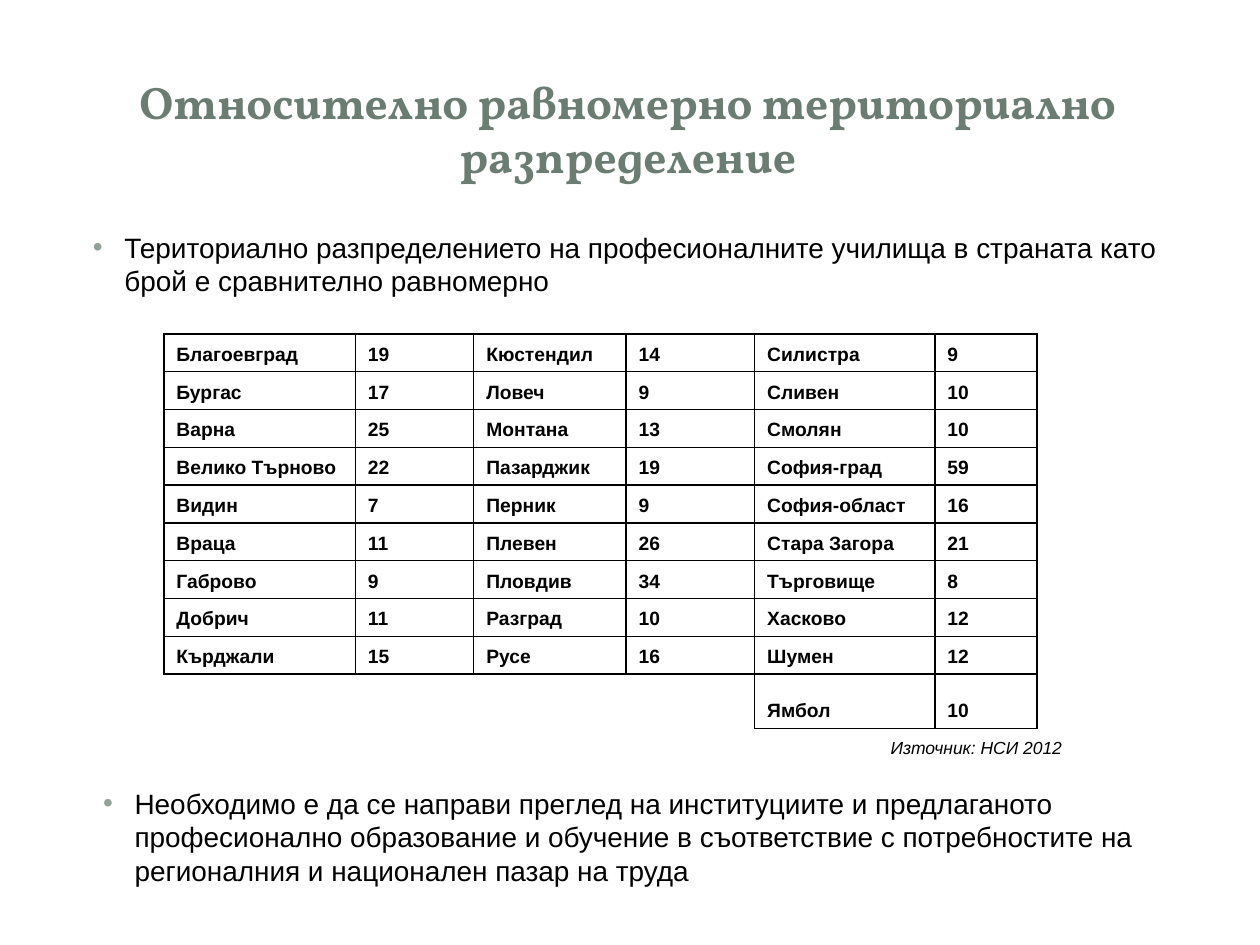
"""Builds a slide on the territorial distribution of vocational schools."""
from itertools import zip_longest

from lxml import etree
from pptx import Presentation
from pptx.dml.color import RGBColor
from pptx.enum.lang import MSO_LANGUAGE_ID
from pptx.enum.shapes import MSO_SHAPE
from pptx.enum.text import MSO_ANCHOR, PP_ALIGN
from pptx.oxml.ns import qn
from pptx.util import Inches, Pt

CENTER, LEFT = PP_ALIGN.CENTER, PP_ALIGN.LEFT
TOP, MIDDLE, BOTTOM = MSO_ANCHOR.TOP, MSO_ANCHOR.MIDDLE, MSO_ANCHOR.BOTTOM
ROUNDED, RECTANGLE = MSO_SHAPE.ROUNDED_RECTANGLE, MSO_SHAPE.RECTANGLE
BULGARIAN = MSO_LANGUAGE_ID.BULGARIAN

COLORS = {"title": "6B7D72", "bullet": "93A299", "ink": "000000", "panel": "FFFFFF"}
TITLE = "Относително равномерно териториално разпределение"
FINDING = ("Териториално разпределението на професионалните училища "
           "в страната като брой е сравнително равномерно")
CONCLUSION = ("Необходимо е да се направи преглед на институциите и предлаганото "
              "професионално образование и обучение в съответствие с потребностите "
              "на регионалния и национален пазар на труда")
SOURCE = "Източник: НСИ 2012"
SCHOOLS = [
    [("Благоевград", 19), ("Бургас", 17), ("Варна", 25), ("Велико Търново", 22),
     ("Видин", 7), ("Враца", 11), ("Габрово", 9), ("Добрич", 11), ("Кърджали", 15)],
    [("Кюстендил", 14), ("Ловеч", 9), ("Монтана", 13), ("Пазарджик", 19),
     ("Перник", 9), ("Плевен", 26), ("Пловдив", 34), ("Разград", 10), ("Русе", 16)],
    [("Силистра", 9), ("Сливен", 10), ("Смолян", 10), ("София-град", 59),
     ("София-област", 16), ("Стара Загора", 21), ("Търговище", 8), ("Хасково", 12),
     ("Шумен", 12), ("Ямбол", 10)],
]
COLUMN_WIDTHS = [1.52, 0.94, 1.21, 1.02, 1.43, 0.81]
ROW_HEIGHT, LAST_ROW_HEIGHT = 0.3, 0.43
PANELS = [
    (ROUNDED, (0.1, 0.11, 9.8, 7.29), 100),
    (RECTANGLE, (0.3, 0.3, 9.4, 1.45), 83),
    (RECTANGLE, (0.41, 0.41, 9.16, 1.22), 100),
]
PANEL_ROUNDING = 0.02


def add_panel(slide, outline, box, opacity):
    panel = slide.shapes.add_shape(outline, *map(Inches, box))
    panel.shadow.inherit = False
    panel.line.fill.background()
    panel.fill.solid()
    panel.fill.fore_color.rgb = RGBColor.from_string(COLORS["panel"])
    if outline == ROUNDED:
        panel.adjustments[0] = PANEL_ROUNDING
    if opacity < 100:
        tint = panel._element.spPr.find(f"{qn('a:solidFill')}/{qn('a:srgbClr')}")
        etree.SubElement(tint, qn("a:alpha"), val=str(opacity * 1000))


def write(frame, text, size=16, font="Arial", color="ink", bold=False,
          italic=False, align=LEFT, anchor=TOP, bullet=False, wrap=True):
    frame.word_wrap = wrap
    frame.vertical_anchor = anchor
    paragraph = frame.paragraphs[0]
    paragraph.alignment = align
    run = paragraph.add_run()
    run.text = text
    run.font.size, run.font.name = Pt(size), font
    run.font.bold, run.font.italic = bold, italic
    run.font.language_id = BULGARIAN
    run.font.color.rgb = RGBColor.from_string(COLORS[color])
    if bullet:
        paragraph.space_before = Pt(0.2 * size)
        properties = paragraph._p.get_or_add_pPr()
        properties.set("marL", str(Inches(0.38)))
        properties.set("indent", str(Inches(-0.25)))
        tint = etree.SubElement(properties, qn("a:buClr"))
        etree.SubElement(tint, qn("a:srgbClr"), val=COLORS["bullet"])
        etree.SubElement(properties, qn("a:buFont"), typeface="Arial")
        etree.SubElement(properties, qn("a:buChar"), char="•")


def add_text(slide, box, text, **style):
    frame = slide.shapes.add_textbox(*map(Inches, box)).text_frame
    write(frame, text, **style)


def draw_borders(cell, sides):
    properties = cell._tc.get_or_add_tcPr()
    for position, side in enumerate("LRTB"):
        line = etree.Element(qn(f"a:ln{side}"), w=str(Pt(1)))
        if side in sides:
            fill = etree.SubElement(line, qn("a:solidFill"))
            etree.SubElement(fill, qn("a:srgbClr"), val=COLORS["ink"])
        else:
            etree.SubElement(line, qn("a:noFill"))
        properties.insert(position, line)


def add_schools(slide, left, top):
    rows = [[value for pair in line for value in pair]
            for line in zip_longest(*SCHOOLS, fillvalue=("", ""))]
    heights = [ROW_HEIGHT] * (len(rows) - 1) + [LAST_ROW_HEIGHT]
    size = (left, top, sum(COLUMN_WIDTHS), sum(heights))
    table = slide.shapes.add_table(len(rows), len(COLUMN_WIDTHS),
                                   *map(Inches, size)).table
    table.first_row = table.horz_banding = False
    for column, width in zip(table.columns, COLUMN_WIDTHS):
        column.width = Inches(width)
    for row, height, values in zip(table.rows, heights, rows):
        row.height = Inches(height)
        for index, (cell, value) in enumerate(zip(row.cells, values)):
            cell.fill.background()
            if value == "":
                beside_value = values[index + 1] != ""
                draw_borders(cell, "RT" if beside_value else "T")
                continue
            write(cell.text_frame, str(value), size=11, bold=True)
            cell.vertical_anchor = BOTTOM
            draw_borders(cell, "LRTB")


def main():
    deck = Presentation()
    deck.slide_width, deck.slide_height = Inches(10), Inches(7.5)
    slide = deck.slides.add_slide(deck.slide_layouts[6])
    for panel in PANELS:
        add_panel(slide, *panel)
    add_text(slide, (0.47, 0.45, 9.03, 1.14), TITLE, size=26, font="Vollkorn",
             color="title", bold=True, align=CENTER, anchor=MIDDLE)
    add_text(slide, (0.51, 1.78, 9, 0.57), FINDING, bullet=True)
    add_schools(slide, 1.3, 2.65)
    add_text(slide, (0.59, 6.19, 9, 0.94), CONCLUSION, bullet=True)
    add_text(slide, (6.97, 5.8, 1.57, 0.27), SOURCE, size=10, italic=True, wrap=False)
    deck.save("out.pptx")


if __name__ == "__main__":
    main()
